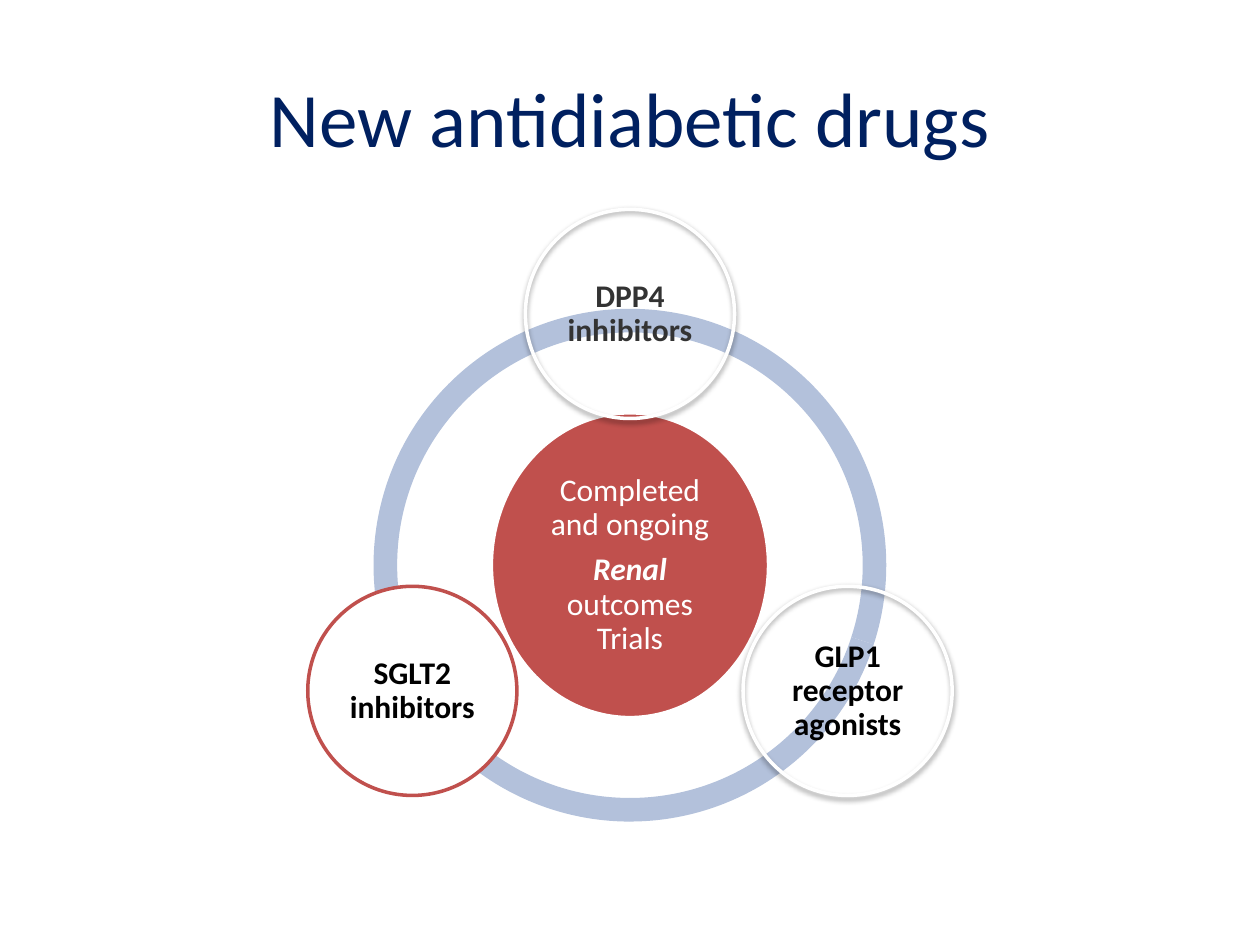
import math

import lxml.etree
import pptx
import pptx.dml.color
import pptx.enum.shapes
import pptx.enum.text
import pptx.oxml.ns
import pptx.util

Pt = pptx.util.Pt
RGB = pptx.dml.color.RGBColor
SHAPE = pptx.enum.shapes.MSO_SHAPE
CENTER = pptx.enum.text.PP_ALIGN.CENTER
MIDDLE = pptx.enum.text.MSO_ANCHOR.MIDDLE

NAVY = RGB(0x00, 0x20, 0x60)
PALE = RGB(0xB3, 0xC1, 0xDB)
RED = RGB(0xC0, 0x50, 0x4D)
WHITE = RGB(0xFF, 0xFF, 0xFF)
BLACK = RGB(0x00, 0x00, 0x00)
GREY = RGB(0x33, 0x33, 0x33)

MID_X, MID_Y = 360, 323
RING = 293
ORBIT = 143.6
NODE = 119.5
CORE_W, CORE_H = 158.4, 174.2


def around(x, y, wide, high):
    """Left, top, width and height of a box centred on x, y."""
    return [Pt(v) for v in (x - wide / 2, y - high / 2, wide, high)]


class Deck:
    """Holds the text style and the current slide."""

    def __init__(self, wide, high):
        self.show = pptx.Presentation()
        self.show.slide_width, self.show.slide_height = Pt(wide), Pt(high)
        self.slide = self.show.slides.add_slide(self.show.slide_layouts[5])
        self.font = "Calibri"

    def words(self, para, text, size, color, **style):
        run = para.add_run()
        run.text = text
        look = {"name": self.font, "size": Pt(size), **style}
        for key, value in look.items():
            setattr(run.font, key, value)
        run.font.color.rgb = color

    def title(self, text, box, size, color):
        head = self.slide.shapes.title
        head.left, head.top, head.width, head.height = map(Pt, box)
        head.text_frame.vertical_anchor = MIDDLE
        para = head.text_frame.paragraphs[0]
        para.alignment = CENTER
        self.words(para, text, size, color)

    def shape(self, kind, box, fill=None, line=None):
        item = self.slide.shapes.add_shape(kind, *box)
        item.shadow.inherit = False
        if fill is None:
            item.fill.background()
        else:
            item.fill.solid()
            item.fill.fore_color.rgb = fill
        if line is None:
            item.line.fill.background()
        else:
            item.line.color.rgb = line
            item.line.width = Pt(2)
        return item

    def arc(self, box, start, end, thick):
        """Ring part running clockwise between two angles in degrees."""
        item = self.shape(SHAPE.BLOCK_ARC, box, PALE)
        # Angles are kept in 60000ths of a degree, adjustments in 100000ths
        for i, value in enumerate((start * 0.6, end * 0.6, thick)):
            item.adjustments[i] = value

    def shade(self, item):
        """Give the shape a soft shadow just below it."""
        qn = pptx.oxml.ns.qn
        effects = item._element.spPr.find(qn("a:effectLst"))
        outer = lxml.etree.SubElement(
            effects, qn("a:outerShdw"), blurRad=str(Pt(3.1)),
            dist=str(Pt(1.6)), dir="5400000", rotWithShape="0")
        color = lxml.etree.SubElement(outer, qn("a:srgbClr"), val="000000")
        lxml.etree.SubElement(color, qn("a:alpha"), val="38000")

    def label(self, box, paras, color):
        """Centred text; each paragraph is a list of (text, style) runs."""
        frame = self.slide.shapes.add_textbox(*box).text_frame
        look = {"word_wrap": True, "vertical_anchor": MIDDLE}
        look.update({"margin_" + side: Pt(2)
                     for side in ("left", "top", "right", "bottom")})
        for key, value in look.items():
            setattr(frame, key, value)
        for i, runs in enumerate(paras):
            para = frame.add_paragraph() if i else frame.paragraphs[0]
            form = {"alignment": CENTER, "line_spacing": 0.9,
                    "space_after": Pt(6.3)}
            for key, value in form.items():
                setattr(para, key, value)
            for text, style in runs:
                self.words(para, text, 18, color, **style)

    def disc(self, x, y, wide, high, paras, color, fill, line, shaded=False):
        """Ellipse with a label in its inscribed rectangle."""
        item = self.shape(SHAPE.OVAL, around(x, y, wide, high), fill, line)
        if shaded:
            self.shade(item)
        inner = math.sqrt(0.5)
        self.label(around(x, y, wide * inner, high * inner), paras, color)


def main():
    deck = Deck(720, 540)
    deck.title("New antidiabetic drugs", (36, 21.6, 648, 90), 44, NAVY)

    for start, end in ((90, 162), (18, 90), (162, 18)):
        deck.arc(around(MID_X, MID_Y, RING, RING), start, end, 0.046)

    core = [[("Completed and ongoing", {})],
            [("Renal ", {"bold": True, "italic": True}),
             ("outcomes Trials", {})]]
    deck.disc(MID_X, MID_Y, CORE_W, CORE_H, core, WHITE, RED, WHITE)

    drugs = (("DPP4 inhibitors", GREY, None, WHITE, True),
             ("GLP1 receptor agonists", BLACK, None, WHITE, True),
             ("SGLT2 inhibitors", BLACK, WHITE, RED, False))
    for i, (text, *look) in enumerate(drugs):
        turn = math.radians(360 / len(drugs) * i - 90)
        x = MID_X + ORBIT * math.cos(turn)
        y = MID_Y + ORBIT * math.sin(turn)
        deck.disc(x, y, NODE, NODE, [[(text, {"bold": True})]], *look)

    deck.show.save("out.pptx")


if __name__ == "__main__":
    main()
